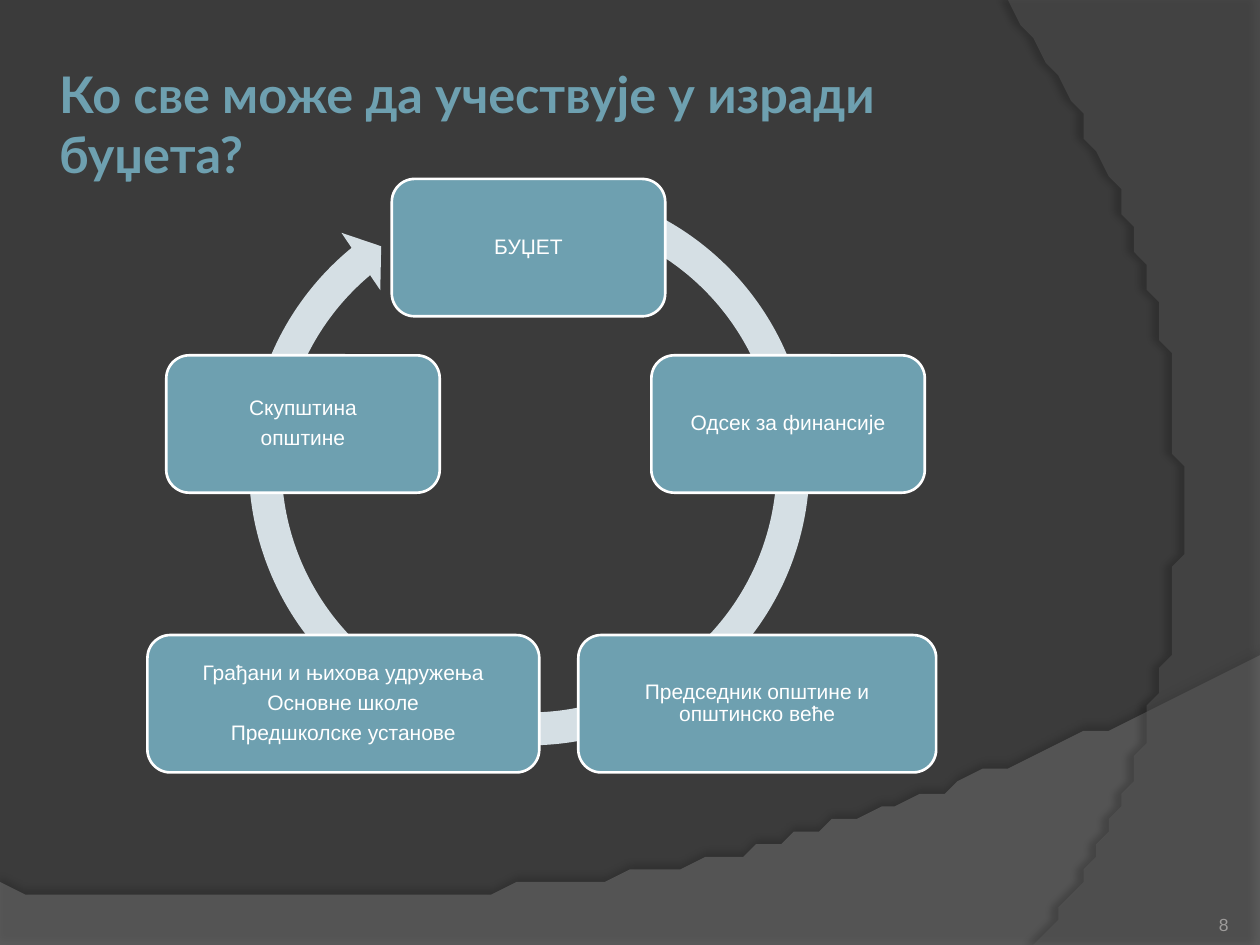
from lxml.etree import SubElement
from pptx import Presentation
from pptx.dml.color import RGBColor
from pptx.enum.shapes import MSO_SHAPE
from pptx.enum.text import MSO_ANCHOR, PP_ALIGN
from pptx.oxml.ns import qn
from pptx.util import Inches, Pt


def color(target, value):
    if hasattr(target, "solid"):
        target.solid()
        target = target.fore_color
    target.rgb = RGBColor.from_string(value)


def bezier(start, first, second, end, steps=60):
    curve = []
    for step in range(1, steps + 1):
        t = step / steps
        weights = ((1 - t) ** 3, 3 * t * (1 - t) ** 2, 3 * t * t * (1 - t), t ** 3)
        curve.append(tuple(sum(weight * point[axis] for weight, point in
                               zip(weights, (start, first, second, end)))
                           for axis in (0, 1)))
    return curve


deck = Presentation()
deck.slide_width, deck.slide_height = Inches(10), Inches(7.5)
column, row = deck.slide_width / 100, deck.slide_height / 75
page = deck.slides.add_slide(deck.slide_layouts[5])
color(page.background.fill, "3B3B3B")

lower_wave = [(0, 70.5), (0, 75.1), (100, 75.1), (100, 52)]
lower_wave += bezier((100, 52), (55.9, 72.9), (39.1, 71.9), (0, 70.5))
right_wave = [(100, 0.2), (100, 75), (82.1, 75)]
right_wave += bezier((82.1, 75), (93.5, 61.9), (101.8, 30), (80, 0))
waves = [
    (lower_wave, "7F7F7F", 45, 35, 3.5, 270),
    (right_wave, "5E5E5E", 40, 45, 4, 180),
]
for points, shade, opacity, shadow_opacity, distance, direction in waves:
    builder = page.shapes.build_freeform(*points[0], scale=(column, row))
    builder.add_line_segments(points[1:], close=True)
    wave = builder.convert_to_shape()
    color(wave.fill, shade)
    wave.line.fill.background()
    fill_color = wave.fill._xPr.find(qn("a:solidFill"))[0]
    SubElement(fill_color, qn("a:alpha"), val=str(opacity * 1000))
    effects = SubElement(wave._element.spPr, qn("a:effectLst"))
    shadow = SubElement(effects, qn("a:outerShdw"), blurRad=str(Pt(4)),
                        dist=str(Pt(distance)), dir=str(direction * 60000),
                        algn="ctr", rotWithShape="0")
    shadow_color = SubElement(shadow, qn("a:srgbClr"), val="000000")
    SubElement(shadow_color, qn("a:alpha"), val=str(shadow_opacity * 1000))

title = page.shapes.title
title.left, title.top = int(4.2 * column), int(5 * row)
title.width, title.height = int(79.2 * column), int(8 * row)
frame = title.text_frame
frame.text = "Ко све може да учествује у изради буџета?"
frame.vertical_anchor = MSO_ANCHOR.TOP
frame.margin_left = frame.margin_right = Inches(0.05)
frame.margin_top = frame.margin_bottom = 0
para = frame.paragraphs[0]
para.alignment = PP_ALIGN.LEFT
para.font.name, para.font.size, para.font.bold = "Lato", Pt(28.8), True
color(para.font.color, "6EA0B0")

ring = page.shapes.add_shape(
    MSO_SHAPE.CIRCULAR_ARROW,
    int(18.3 * column), int(13.2 * row), int(47.4 * column), int(47.4 * row))
for index, value in enumerate((0.055, 3.307, 138.24, 173.568, 0.058)):
    ring.adjustments[index] = value
ring.shadow.inherit = False
color(ring.fill, "D5DFE4")
ring.line.fill.background()

participants = [
    (31.1, 14.2, 21.7, ["БУЏЕТ"]),
    (51.7, 28.2, 21.7, ["Одсек за финансије"]),
    (45.9, 50.4, 28.4, ["Председник општине и општинско веће"]),
    (11.7, 50.4, 31.1, ["Грађани и њихова удружења", "Основне школе",
                        "Предшколске установе"]),
    (13.2, 28.2, 21.7, ["Скупштина", "општине"]),
]
for left, top, width, lines in participants:
    box = page.shapes.add_shape(
        MSO_SHAPE.ROUNDED_RECTANGLE,
        int(left * column), int(top * row), int(width * column), int(10.9 * row))
    box.shadow.inherit = False
    color(box.fill, "6EA0B0")
    color(box.line.fill, "FFFFFF")
    box.line.width = Pt(1.5)
    frame = box.text_frame
    frame.text = "\n".join(lines)
    frame.word_wrap = True
    frame.vertical_anchor = MSO_ANCHOR.MIDDLE
    frame.margin_left = frame.margin_right = Inches(0.05)
    for para in frame.paragraphs:
        para.alignment = PP_ALIGN.CENTER
        para.line_spacing, para.space_after = 0.9, Pt(4.2)
        para.font.name, para.font.size = "Arial", Pt(12)
        color(para.font.color, "FFFFFF")

number = page.shapes.add_textbox(
    int(89.2 * column), int(70.2 * row), int(8.3 * column), int(4 * row))
frame = number.text_frame
frame.text = "8"
frame.word_wrap = True
frame.vertical_anchor = MSO_ANCHOR.BOTTOM
frame.margin_left = frame.margin_right = frame.margin_top = frame.margin_bottom = 0
para = frame.paragraphs[0]
para.alignment = PP_ALIGN.RIGHT
para.font.name, para.font.size = "Arial", Pt(10)
color(para.font.color, "9D9B9A")

deck.save("out.pptx")
